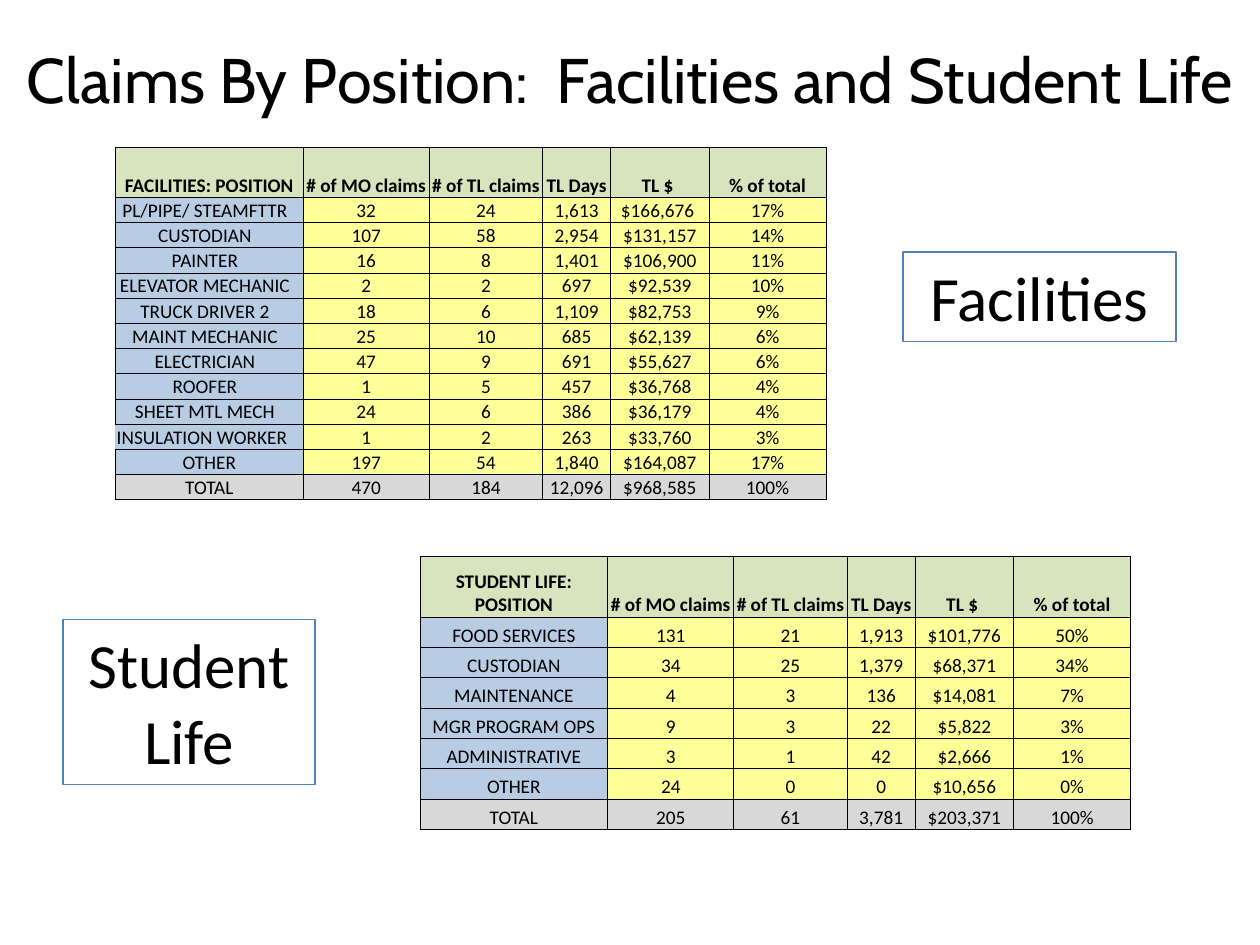
from dataclasses import dataclass

from lxml import etree
from pptx import Presentation
from pptx.dml.color import RGBColor
from pptx.enum.text import MSO_ANCHOR, MSO_AUTO_SIZE, PP_ALIGN
from pptx.oxml.ns import qn
from pptx.util import Emu, Inches, Pt

LEFT, CENTER = PP_ALIGN.LEFT, PP_ALIGN.CENTER
MIDDLE, BOTTOM = MSO_ANCHOR.MIDDLE, MSO_ANCHOR.BOTTOM
FIXED_SIZE = MSO_AUTO_SIZE.NONE
TITLE_ONLY = 5
GRID_COLUMNS, GRID_ROWS = 120, 90


@dataclass(frozen=True)
class Theme:
    title_font: str = "Cabin"
    body_font: str = "Calibri"
    large: float = 36
    small: float = 11
    text: str = "000000"
    outline: str = "4F81BD"
    outline_width: float = 0.75
    border: str = "000000"
    border_width: float = 0.5
    header: str = "D7E4BD"
    position: str = "B8CCE4"
    value: str = "FFFF99"
    total: str = "D8D8D8"
    cell_inset: float = 0.01
    shifted_inset: float = 0.08


class SlideBuilder:
    def __init__(self, presentation, theme):
        self.theme = theme
        self.column = presentation.slide_width / GRID_COLUMNS
        self.row = presentation.slide_height / GRID_ROWS
        self.slide = presentation.slides.add_slide(presentation.slide_layouts[TITLE_ONLY])

    def place(self, left, top, width, height):
        return (Emu(round(left * self.column)), Emu(round(top * self.row)),
                Emu(round(width * self.column)), Emu(round(height * self.row)))

    def set_text(self, text_frame, text, font, size, bold=False, alignment=CENTER):
        text_frame.text = text
        paragraph = text_frame.paragraphs[0]
        paragraph.alignment = alignment
        paragraph.font.name = font
        paragraph.font.size = Pt(size)
        paragraph.font.bold = bold
        paragraph.font.color.rgb = RGBColor.from_string(self.theme.text)

    def title(self, text, *box):
        shape = self.slide.shapes.title
        shape.left, shape.top, shape.width, shape.height = self.place(*box)
        shape.text_frame.auto_size = FIXED_SIZE
        shape.text_frame.vertical_anchor = MIDDLE
        self.set_text(shape.text_frame, text, self.theme.title_font, self.theme.large)

    def label(self, text, *box):
        shape = self.slide.shapes.add_textbox(*self.place(*box))
        shape.line.color.rgb = RGBColor.from_string(self.theme.outline)
        shape.line.width = Pt(self.theme.outline_width)
        shape.text_frame.word_wrap = True
        self.set_text(shape.text_frame, text, self.theme.body_font, self.theme.large)

    def borders(self, cell, open_left):
        properties = cell._tc.get_or_add_tcPr()
        for side in ("lnL", "lnR", "lnT", "lnB"):
            line = etree.SubElement(properties, qn(f"a:{side}"),
                                    w=str(Pt(self.theme.border_width)))
            if side == "lnL" and open_left:
                etree.SubElement(line, qn("a:noFill"))
            else:
                fill = etree.SubElement(line, qn("a:solidFill"))
                etree.SubElement(fill, qn("a:srgbClr"), val=self.theme.border)

    def cell(self, cell, text, color, bold=False, alignment=CENTER, shifted=False):
        inset = Inches(self.theme.cell_inset)
        cell.margin_left = cell.margin_top = inset
        cell.margin_right = Inches(self.theme.shifted_inset) if shifted else inset
        cell.margin_bottom = 0
        cell.vertical_anchor = BOTTOM
        self.borders(cell, open_left=alignment == LEFT)
        cell.fill.solid()
        cell.fill.fore_color.rgb = RGBColor.from_string(color)
        self.set_text(cell.text_frame, text, self.theme.body_font, self.theme.small,
                      bold, alignment)

    def table(self, records, shares, *box, shifted=(), left_aligned=()):
        area = self.place(*box)
        table = self.slide.shapes.add_table(len(records), len(shares), *area).table
        table.first_row = table.horz_banding = False
        for column, share in zip(table.columns, shares):
            column.width = Emu(round(area[2] * share / sum(shares)))
        unit = area[3] / (len(records) + 1)
        last = len(records) - 1
        for row_index, record in enumerate(records):
            header = row_index == 0
            table.rows[row_index].height = Emu(round(unit * (2 if header else 1)))
            for column_index, text in enumerate(record):
                is_position = column_index == 0
                if header:
                    color = self.theme.header
                elif row_index == last:
                    color = self.theme.total
                else:
                    color = self.theme.position if is_position else self.theme.value
                self.cell(table.cell(row_index, column_index), text, color, bold=header,
                          alignment=LEFT if text in left_aligned else CENTER,
                          shifted=is_position and row_index in shifted)


MEASURES = ("# of MO claims", "# of TL claims", "TL Days", "TL $ ", "% of total")
COLUMN_SHARES = (1.49, 1, 0.9, 0.54, 0.78, 0.93)

FACILITIES = [
    ("FACILITIES: POSITION", *MEASURES),
    ("PL/PIPE/ STEAMFTTR", "32", "24", "1,613", "$166,676 ", "17%"),
    ("CUSTODIAN", "107", "58", "2,954", "$131,157", "14%"),
    ("PAINTER", "16", "8", "1,401", "$106,900", "11%"),
    ("ELEVATOR MECHANIC", "2", "2", "697", "$92,539", "10%"),
    ("TRUCK DRIVER 2", "18", "6", "1,109", "$82,753", "9%"),
    ("MAINT MECHANIC", "25", "10", "685", "$62,139", "6%"),
    ("ELECTRICIAN", "47", "9", "691", "$55,627", "6%"),
    ("ROOFER", "1", "5", "457", "$36,768", "4%"),
    ("SHEET MTL MECH", "24", "6", "386", "$36,179", "4%"),
    ("INSULATION WORKER", "1", "2", "263", "$33,760", "3%"),
    ("OTHER", "197", "54", "1,840", "$164,087", "17%"),
    ("TOTAL", "470", "184", "12,096", "$968,585", "100%"),
]

STUDENT_LIFE = [
    ("STUDENT LIFE: POSITION", *MEASURES),
    ("FOOD SERVICES", "131", "21", "1,913", "$101,776", "50%"),
    ("CUSTODIAN", "34", "25", "1,379", "$68,371", "34%"),
    ("MAINTENANCE", "4", "3", "136", "$14,081", "7%"),
    ("MGR PROGRAM OPS", "9", "3", "22", "$5,822", "3%"),
    ("ADMINISTRATIVE", "3", "1", "42", "$2,666", "1%"),
    ("OTHER", "24", "0", "0", "$10,656", "0%"),
    ("TOTAL", "205", "61", "3,781", "$203,371", "100%"),
]


def main():
    presentation = Presentation()
    presentation.slide_width, presentation.slide_height = Inches(10), Inches(7.5)
    builder = SlideBuilder(presentation, Theme())
    builder.title("Claims By Position:  Facilities and Student Life", 0, 0, GRID_COLUMNS, 15)
    builder.label("Facilities", 86, 24, 26, 8.5)
    builder.label("Student Life", 6, 59, 24, 15.7)
    builder.table(FACILITIES, COLUMN_SHARES, 11, 14, 67.7, 33.6,
                  shifted=range(1, 10), left_aligned=("INSULATION WORKER",))
    builder.table(STUDENT_LIFE, COLUMN_SHARES, 40, 53, 67.7, 26)
    presentation.save("out.pptx")


if __name__ == "__main__":
    main()
